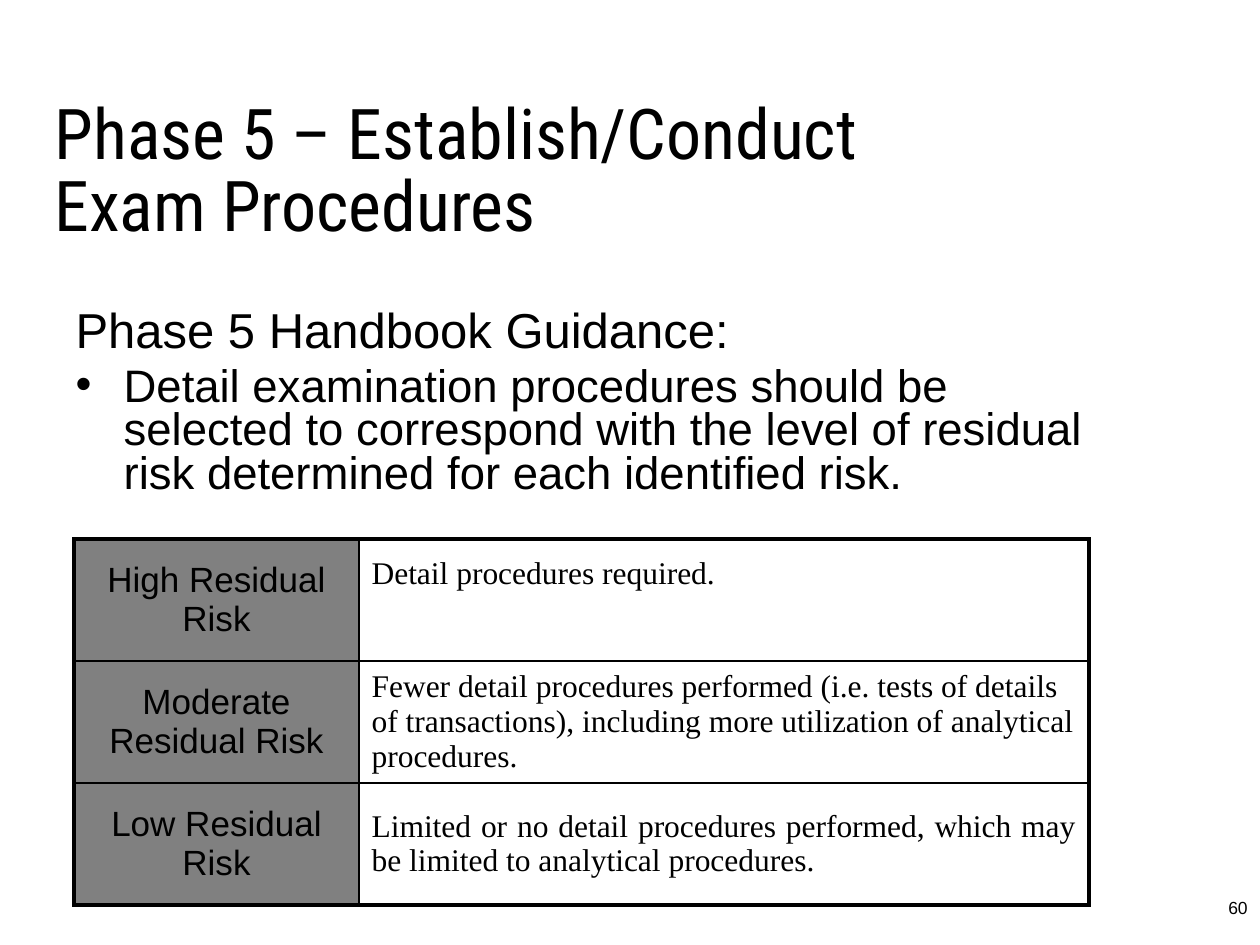
from dataclasses import dataclass

from lxml.etree import SubElement
from pptx import Presentation
from pptx.dml.color import RGBColor
from pptx.enum.text import MSO_ANCHOR as Anchor, MSO_AUTO_SIZE as Fit, PP_ALIGN as Align
from pptx.oxml.ns import qn
from pptx.util import Emu, Pt

SCALE = 914400 / 126
BLACK = "000000"
GREY = "808080"
SANS = "Arial"
SERIF = "Times New Roman"
HEAD = "Roboto Condensed"


@dataclass
class Box:
    left: int
    top: int
    width: int
    height: int


@dataclass
class Risk:
    label: str
    text: str
    align: Align
    anchor: Anchor = Anchor.MIDDLE
    inset: int = 6


RISKS = [
    Risk("High Residual Risk", "Detail procedures required.", Align.JUSTIFY, Anchor.TOP, 17),
    Risk(
        "Moderate Residual Risk",
        "Fewer detail procedures performed (i.e. tests of details of transactions), "
        "including more utilization of analytical procedures.",
        Align.LEFT,
    ),
    Risk(
        "Low Residual Risk",
        "Limited or no detail procedures performed, which may be limited to analytical procedures.",
        Align.JUSTIFY,
    ),
]


def px(size: int) -> Emu:
    return Emu(round(size * SCALE))


def paint(code: str) -> RGBColor:
    return RGBColor.from_string(code)


def place(shape, box: Box) -> None:
    shape.left, shape.top = px(box.left), px(box.top)
    shape.width, shape.height = px(box.width), px(box.height)


def write(para, text: str, size: int, face: str, align: Align = Align.LEFT) -> None:
    para.alignment = align
    run = para.add_run()
    run.text = text
    run.font.size = Pt(size)
    run.font.name = face
    run.font.bold = False
    run.font.color.rgb = paint(BLACK)


def mark(para, sign: str = "") -> None:
    props = para._p.get_or_add_pPr()
    props.set("marL", str(px(48)))
    props.set("indent", str(-px(48)))
    if sign:
        SubElement(props, qn("a:buFont")).set("typeface", SANS)
        SubElement(props, qn("a:buChar")).set("char", sign)
    else:
        SubElement(props, qn("a:buNone"))


def edge(cell, sides: dict[str, float]) -> None:
    props = cell._tc.get_or_add_tcPr()
    for spot, (side, width) in enumerate(sides.items()):
        line = SubElement(props, qn(f"a:ln{side}"))
        line.set("w", str(Pt(width)))
        fill = SubElement(line, qn("a:solidFill"))
        SubElement(fill, qn("a:srgbClr")).set("val", BLACK)
        props.insert(spot, line)


def add_title(slide) -> None:
    title = slide.shapes.title
    place(title, Box(42, 95, 935, 158))
    frame = title.text_frame
    frame.auto_size = Fit.NONE
    frame.vertical_anchor = Anchor.MIDDLE
    para = frame.paragraphs[0]
    para.line_spacing = 0.85
    write(para, "Phase 5 – Establish/Conduct Exam Procedures", 40, HEAD)


def add_body(slide) -> None:
    body = slide.placeholders[1]
    place(body, Box(63, 305, 1061, 209))
    frame = body.text_frame
    frame.auto_size = Fit.NONE
    lead, item = frame.paragraphs[0], frame.add_paragraph()
    mark(lead)
    mark(item, "•")
    for para, gap in ((lead, 0), (item, 5)):
        para.line_spacing = 0.8
        para.space_before = Pt(gap)
    write(lead, "Phase 5 Handbook Guidance:", 28, SANS)
    write(
        item,
        "Detail examination procedures should be selected to correspond with "
        "the level of residual risk determined for each identified risk.",
        26,
        SANS,
    )


def add_grid(slide, risks: list[Risk]) -> None:
    last = len(risks) - 1
    table = slide.shapes.add_table(
        len(risks), 2, px(74), px(539), px(1015), px(122 * len(risks))
    ).table
    table.first_row = table.horz_banding = False
    for col, width in zip(table.columns, (285, 730)):
        col.width = px(width)
    for row, risk in enumerate(risks):
        label, note = table.cell(row, 0), table.cell(row, 1)
        label.fill.solid()
        label.fill.fore_color.rgb = paint(GREY)
        note.fill.background()
        label.vertical_anchor = Anchor.MIDDLE
        note.vertical_anchor = risk.anchor
        note.margin_top = px(risk.inset)
        write(label.text_frame.paragraphs[0], risk.label, 20, SANS, Align.CENTER)
        write(note.text_frame.paragraphs[0], risk.text, 18, SERIF, risk.align)
        ends = {"T": 2.25 if row == 0 else 1, "B": 2.25 if row == last else 1}
        edge(label, {"L": 2.25, "R": 1, **ends})
        edge(note, {"L": 1, "R": 2.25, **ends})


def add_page(slide) -> None:
    box = slide.shapes.add_textbox(px(966), px(891), px(294), px(34))
    box.text_frame.word_wrap = True
    write(box.text_frame.paragraphs[0], "60", 10, SANS, Align.RIGHT)


def main() -> None:
    deck = Presentation()
    deck.slide_width, deck.slide_height = px(1260), px(945)
    slide = deck.slides.add_slide(deck.slide_layouts[1])
    add_title(slide)
    add_body(slide)
    add_grid(slide, RISKS)
    add_page(slide)
    deck.save("out.pptx")


if __name__ == "__main__":
    main()
